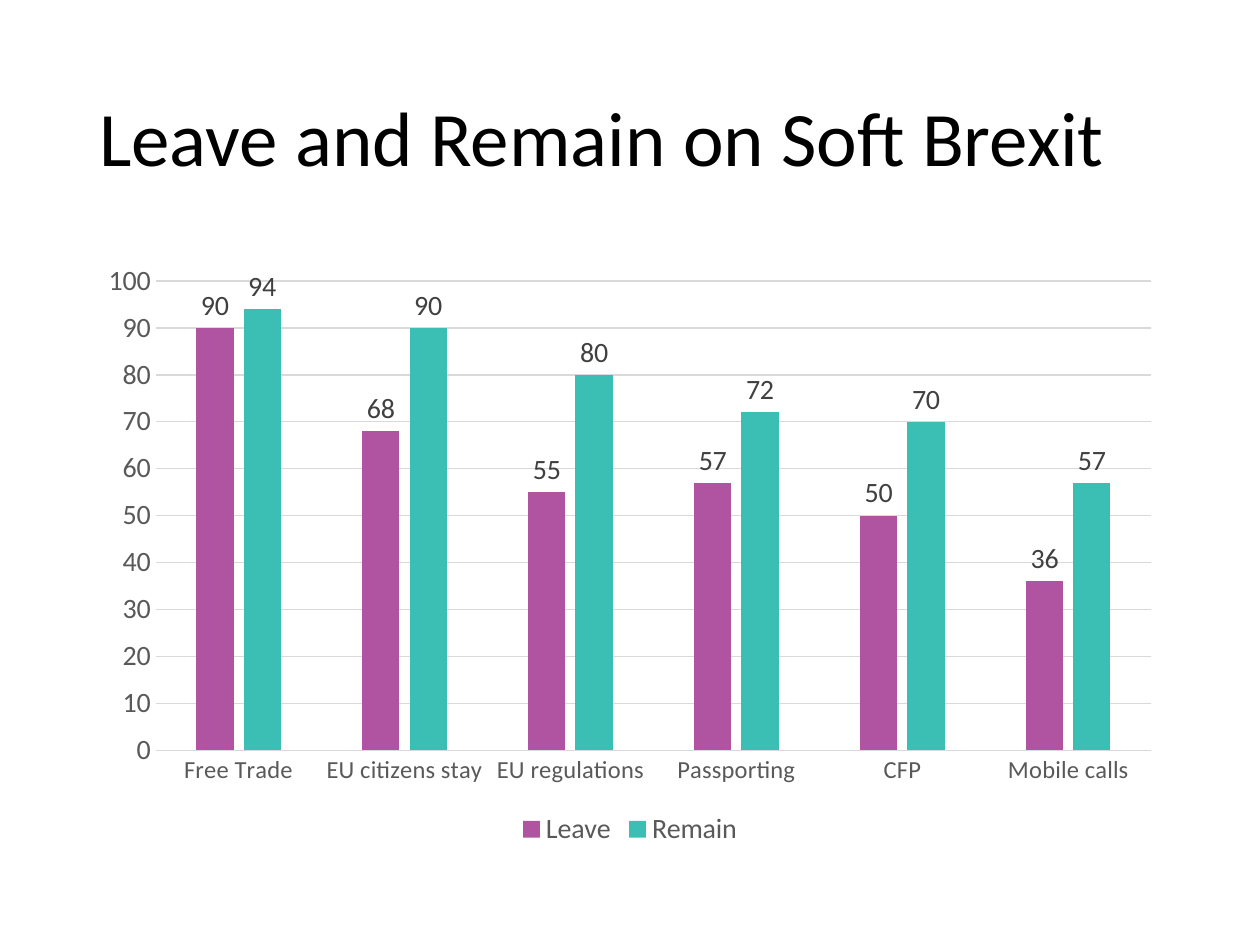
import pptx
import pptx.util
import pptx.chart.data
import pptx.dml.color
import pptx.enum.chart
import pptx.enum.text

RGB = pptx.dml.color.RGBColor
BLACK = RGB(0x00, 0x00, 0x00)
DARK = RGB(0x40, 0x40, 0x40)
GRAY = RGB(0x59, 0x59, 0x59)
PALE = RGB(0xD9, 0xD9, 0xD9)
PLUM = RGB(0xB0, 0x53, 0xA1)
TEAL = RGB(0x3B, 0xBE, 0xB4)

FONT = "Calibri"
SCALE = 914400 / 126
LEFT, WIDTH = 87, 1086

TOPICS = ["Free Trade", "EU citizens stay", "EU regulations",
          "Passporting", "CFP", "Mobile calls"]
VOTES = [("Leave", [90, 68, 55, 57, 50, 36], PLUM),
         ("Remain", [94, 90, 80, 72, 70, 57], TEAL)]


def px(count):
    return pptx.util.Emu(round(count * SCALE))


def style(font, size, color):
    font.name = FONT
    font.size = pptx.util.Pt(size)
    font.bold = False
    font.color.rgb = color


def rule(line):
    line.color.rgb = PALE
    line.width = pptx.util.Pt(0.75)


def add_title(slide, text, top, height):
    box = slide.shapes.add_textbox(px(LEFT), px(top), px(WIDTH), px(height))
    frame = box.text_frame
    frame.word_wrap = True
    frame.vertical_anchor = pptx.enum.text.MSO_ANCHOR.MIDDLE
    para = frame.paragraphs[0]
    para.line_spacing = 0.9
    run = para.add_run()
    run.text = text
    style(run.font, 44, BLACK)


def set_axis(axis, size):
    none = pptx.enum.chart.XL_TICK_MARK.NONE
    axis.major_tick_mark = none
    axis.minor_tick_mark = none
    style(axis.tick_labels.font, size, GRAY)


def set_bars(series, color):
    series.format.fill.solid()
    series.format.fill.fore_color.rgb = color
    series.invert_if_negative = False
    labels = series.data_labels
    labels.show_value = True
    labels.position = pptx.enum.chart.XL_LABEL_POSITION.OUTSIDE_END
    style(labels.font, 16, DARK)


def add_bars(slide, top, height):
    data = pptx.chart.data.CategoryChartData()
    data.categories = TOPICS
    for name, values, color in VOTES:
        data.add_series(name, values)
    kind = pptx.enum.chart.XL_CHART_TYPE.COLUMN_CLUSTERED
    chart = slide.shapes.add_chart(
        kind, px(LEFT), px(top), px(WIDTH), px(height), data).chart
    style(chart.font, 10, BLACK)
    chart.has_title = False
    chart.has_legend = True
    chart.legend.position = pptx.enum.chart.XL_LEGEND_POSITION.BOTTOM
    chart.legend.include_in_layout = False
    style(chart.legend.font, 16, GRAY)

    set_axis(chart.category_axis, 14)
    rule(chart.category_axis.format.line)
    scale = chart.value_axis
    set_axis(scale, 16)
    scale.minimum_scale = 0
    scale.maximum_scale = 100
    scale.major_unit = 10
    scale.format.line.fill.background()
    scale.has_major_gridlines = True
    rule(scale.major_gridlines.format.line)

    plot = chart.plots[0]
    plot.gap_width = 219
    plot.overlap = -27
    plot.vary_by_categories = False
    for series, (name, values, color) in zip(plot.series, VOTES):
        set_bars(series, color)


def main():
    deck = pptx.Presentation()
    deck.slide_width = px(1260)
    deck.slide_height = px(945)
    slide = deck.slides.add_slide(deck.slide_layouts[6])
    add_title(slide, "Leave and Remain on Soft Brexit", 50, 183)
    add_bars(slide, 252, 600)
    deck.save("out.pptx")


if __name__ == "__main__":
    main()
